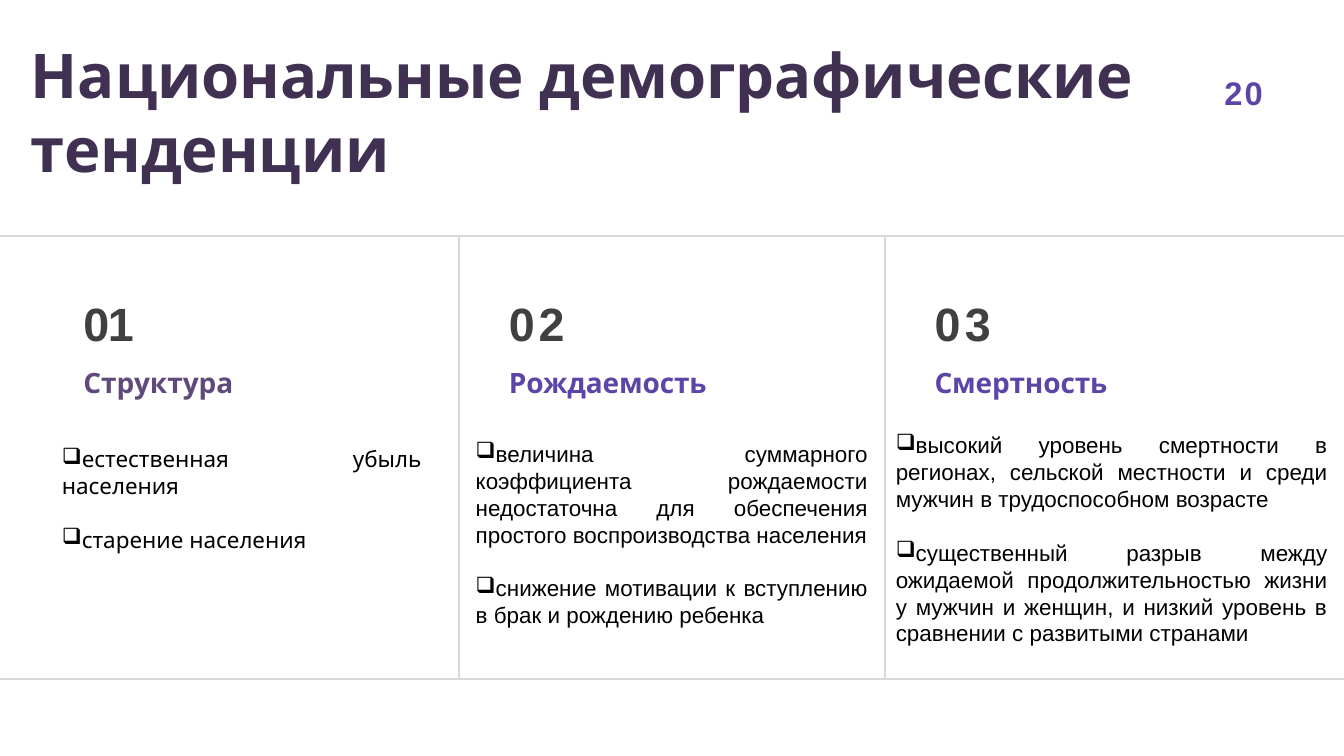
import pptx
import pptx.dml.color
import pptx.enum.shapes
import pptx.enum.text
import pptx.oxml
import pptx.oxml.ns
import pptx.util

Inches, Pt = pptx.util.Inches, pptx.util.Pt
RGBColor = pptx.dml.color.RGBColor
PP_ALIGN = pptx.enum.text.PP_ALIGN

PLUM = RGBColor(0x40, 0x31, 0x52)
MAUVE = RGBColor(0x60, 0x4A, 0x7B)
VIOLET = RGBColor(0x5D, 0x44, 0xA7)
CHARCOAL = RGBColor(0x40, 0x40, 0x41)
BLACK = RGBColor(0, 0, 0)
RULE_GREY = RGBColor(0xD9, 0xD9, 0xD9)

WIDTH, HEIGHT = 20, 11.25
MARGIN = 0.5
COLUMN = (WIDTH - 2 * MARGIN) / 3
GRID_TOP, GRID_BOTTOM = 3.51, 10.11
HEADING_INDENT = 0.73

# Body boxes are (left, top, width, height)
COLUMNS = [
    {"number": "01", "number_spacing": -1.5, "heading": "Структура",
     "heading_color": MAUVE, "heading_spacing": 0, "font": "Noto Sans",
     "box": (0.92, 6.62, 5.35, 1.61),
     "points": ["естественная убыль населения", "старение населения"]},
    {"number": "02", "number_spacing": 4.2, "heading": "Рождаемость",
     "heading_color": VIOLET, "heading_spacing": -0.1, "font": "Arial",
     "box": (7.08, 6.54, 5.83, 3.23),
     "points": ["величина суммарного коэффициента рождаемости недостаточна "
                "для обеспечения простого воспроизводства населения",
                "снижение мотивации к вступлению в брак и рождению ребенка"]},
    {"number": "03", "number_spacing": 4.8, "heading": "Смертность",
     "heading_color": VIOLET, "heading_spacing": -0.1, "font": "Arial",
     "box": (13.33, 6.41, 6.42, 3.25),
     "points": ["высокий уровень смертности в регионах, сельской местности "
                "и среди мужчин в трудоспособном возрасте",
                "существенный разрыв между ожидаемой продолжительностью "
                "жизни у мужчин и женщин, и низкий уровень в сравнении "
                "с развитыми странами"]},
]


def prepare_frame(shape, top_inset=0.01):
    frame = shape.text_frame
    settings = {
        "word_wrap": True,
        "auto_size": pptx.enum.text.MSO_AUTO_SIZE.NONE,
        "vertical_anchor": pptx.enum.text.MSO_ANCHOR.TOP,
        "margin_left": 0, "margin_right": 0, "margin_bottom": 0,
        "margin_top": Inches(top_inset),
    }
    for name, value in settings.items():
        setattr(frame, name, value)
    return frame


def add_text_box(slide, box, top_inset=0.01):
    shape = slide.shapes.add_textbox(*map(Inches, box))
    return prepare_frame(shape, top_inset)


def write_paragraph(frame, text, font, spacing=0, indent=0, bullet=None,
                    **layout):
    """Fill the empty first paragraph, or append one; spacing is in points."""
    paragraph = frame.paragraphs[0]
    if paragraph.runs:
        paragraph = frame.add_paragraph()
    for name, value in layout.items():
        setattr(paragraph, name, value)
    properties = paragraph._p.get_or_add_pPr()
    properties.set("marL", str(Inches(indent)))
    properties.set("indent", "0")
    if bullet:
        mark = pptx.oxml.parse_xml(
            f'<a:buChar {pptx.oxml.ns.nsdecls("a")} char="{bullet}"/>')
        properties.append(mark)
    run = paragraph.add_run()
    run.text = text
    for name, value in font.items():
        if name == "color":
            run.font.color.rgb = value
        else:
            setattr(run.font, name, value)
    if spacing:
        run._r.get_or_add_rPr().set("spc", str(round(spacing * 100)))


def add_rule(slide, x1, y1, x2, y2):
    line = slide.shapes.add_connector(
        pptx.enum.shapes.MSO_CONNECTOR.STRAIGHT,
        *map(Inches, (x1, y1, x2, y2)))
    line.line.color.rgb = RULE_GREY
    line.line.width = Pt(2.25)
    line._element.spPr.append(pptx.oxml.parse_xml(
        f'<a:effectLst {pptx.oxml.ns.nsdecls("a")}/>'))


def add_grid(slide):
    for y in (GRID_BOTTOM, GRID_TOP):
        add_rule(slide, 0, y, WIDTH, y)
    for index in (1, 2):
        x = MARGIN + index * COLUMN
        add_rule(slide, x, GRID_TOP, x, GRID_BOTTOM)


def add_title(slide, text):
    title = slide.shapes.title
    placement = {"left": 0.42, "top": 0.54, "width": 18.86, "height": 2.24}
    for name, value in placement.items():
        setattr(title, name, Inches(value))
    font = {"name": "Noto Sans", "size": Pt(66), "bold": True, "color": PLUM}
    write_paragraph(prepare_frame(title), text, font, -0.1, 0.04,
                    alignment=PP_ALIGN.LEFT, line_spacing=Pt(79.2))


def add_heading(slide, index, column):
    left = MARGIN + index * COLUMN + HEADING_INDENT
    frame = add_text_box(slide, (left, 4.02, 3.1, 1.95), 0.37)
    write_paragraph(frame, column["number"],
                    {"name": "Arial", "size": Pt(50), "bold": True,
                     "color": CHARCOAL},
                    column["number_spacing"], 0.01)
    write_paragraph(frame, column["heading"],
                    {"name": "Noto Sans", "size": Pt(30), "bold": True,
                     "color": column["heading_color"]},
                    column["heading_spacing"], 0.01, space_before=Pt(15.5))


def add_points(slide, column):
    frame = add_text_box(slide, column["box"])
    font = {"name": column["font"], "size": Pt(24), "color": BLACK}
    line_height = Pt(28.8)
    for index, point in enumerate(column["points"]):
        write_paragraph(frame, point, font, bullet="❑",
                        alignment=PP_ALIGN.JUSTIFY, line_spacing=line_height,
                        space_before=line_height if index else Pt(0))


def add_page_number(slide, text):
    frame = add_text_box(slide, (18.21, 1.07, 0.67, 0.61))
    font = {"name": "Arial", "size": Pt(35), "bold": True, "color": VIOLET}
    write_paragraph(frame, text, font, 2.2, 0.01)


def main():
    presentation = pptx.Presentation()
    presentation.slide_width = Inches(WIDTH)
    presentation.slide_height = Inches(HEIGHT)
    slide = presentation.slides.add_slide(presentation.slide_layouts[5])
    add_title(slide, "Национальные демографические тенденции")
    add_grid(slide)
    for index, column in enumerate(COLUMNS):
        add_heading(slide, index, column)
        add_points(slide, column)
    add_page_number(slide, "20")
    presentation.save("out.pptx")


if __name__ == "__main__":
    main()
